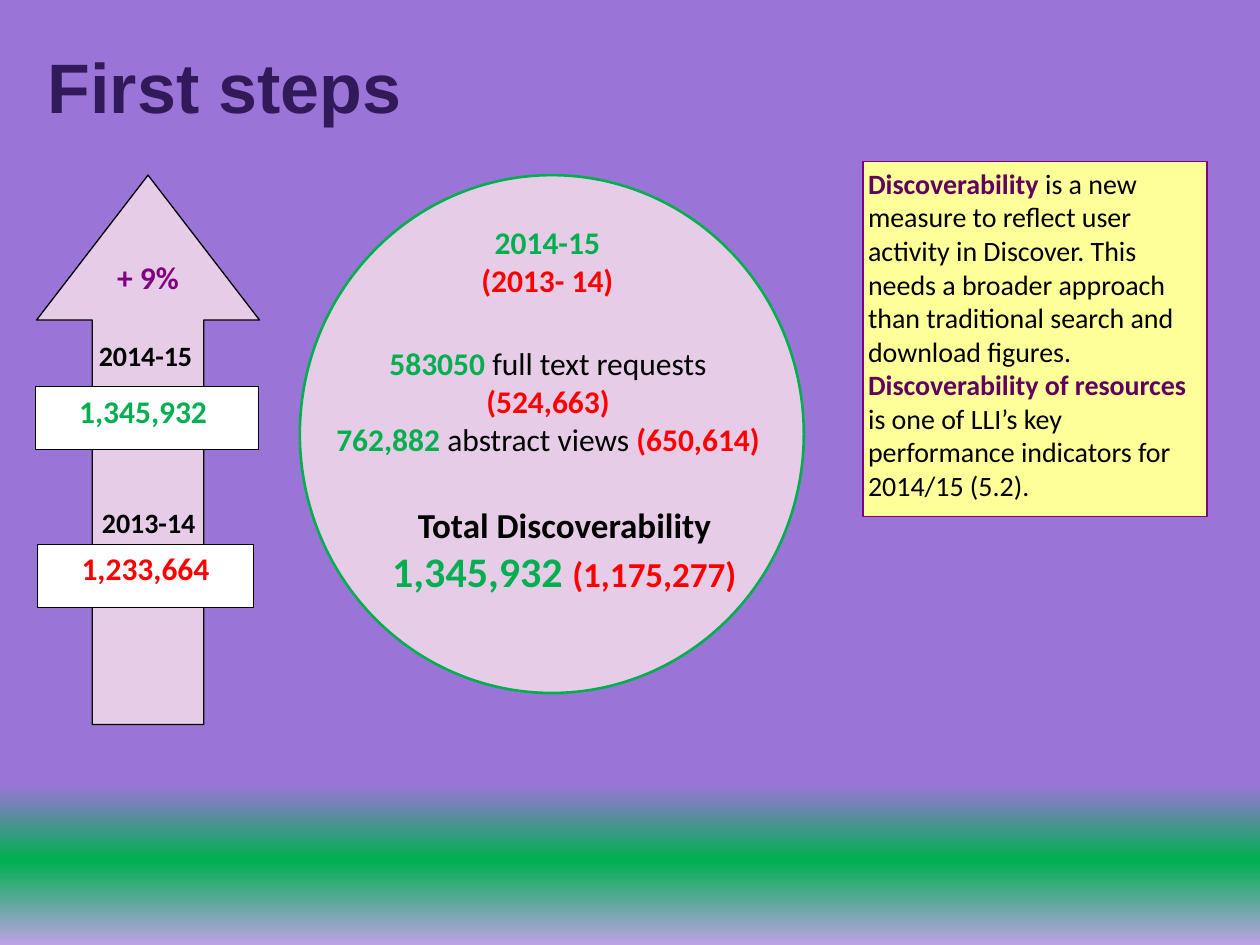
from copy import deepcopy

from pptx import Presentation, util as u
from pptx.dml.color import RGBColor
from pptx.enum import shapes, text

CELL = 0.1  # inches: the slide is a grid of 100 columns by 75 rows
COLUMNS, ROWS = 100, 75

GREEN = RGBColor(0x00, 0xB0, 0x50)
RED = RGBColor(0xFF, 0x00, 0x00)
BLACK = RGBColor(0x00, 0x00, 0x00)
WHITE = RGBColor(0xFF, 0xFF, 0xFF)
PURPLE = RGBColor(0x80, 0x00, 0x80)
PLUM = RGBColor(0x60, 0x00, 0x60)
INDIGO = RGBColor(0x32, 0x19, 0x59)
PINK = RGBColor(0xE6, 0xCC, 0xE6)
YELLOW = RGBColor(0xFF, 0xFF, 0x99)
VIOLET = RGBColor(0x9B, 0x74, 0xD8)
LILAC = RGBColor(0xBC, 0xA2, 0xE5)

CENTER, LEFT = text.PP_ALIGN.CENTER, text.PP_ALIGN.LEFT
FORM = shapes.MSO_SHAPE
LINE_BREAK = None


def grid(*cells):
    return [u.Inches(cell * CELL) for cell in cells]


def paint_background(page, stops):
    """Fill the page with a top-to-bottom gradient of (percent, colour) stops."""
    fill = page.background.fill
    fill.gradient()
    fill.gradient_angle = 270
    stop_list = page._element.find(".//{*}gsLst")
    for _ in stops[2:]:
        stop_list.append(deepcopy(stop_list[0]))
    for stop, (percent, colour) in zip(fill.gradient_stops, stops):
        stop.color.rgb = colour
        stop.position = percent / 100


def add_form(page, form, cells, fill, line, width=0.75):
    shape = page.shapes.add_shape(form, *grid(*cells))
    shape.shadow.inherit = False
    shape.fill.solid()
    shape.fill.fore_color.rgb = fill
    shape.line.color.rgb = line
    shape.line.width = u.Pt(width)
    return shape


def add_span(para, words, colour, bold, size=None):
    span = para.add_run()
    span.text = words
    span.font.color.rgb = colour
    span.font.bold = bold
    if size:
        span.font.size = u.Pt(size)


def write(shape, paragraphs, size, align=CENTER, font="Calibri", inset=0.4, wrap=True):
    """Write paragraphs, each a list of (text, colour, bold[, size]) or LINE_BREAK."""
    frame = shape.text_frame
    frame.word_wrap = wrap
    frame.vertical_anchor = text.MSO_ANCHOR.TOP
    (frame.margin_left, frame.margin_top,
     frame.margin_right, frame.margin_bottom) = grid(*[inset] * 4)
    for index, spans in enumerate(paragraphs):
        para = frame.add_paragraph() if index else frame.paragraphs[0]
        para.alignment = align
        para.font.name = font
        para.font.size = u.Pt(size)
        for span in spans:
            if span is LINE_BREAK:
                para.add_line_break()
            else:
                add_span(para, *span)


def add_text(page, cells, paragraphs, size, **style):
    write(page.shapes.add_textbox(*grid(*cells)), paragraphs, size, **style)


def add_growth_arrow(page):
    arrow = add_form(page, FORM.UP_ARROW, (2.9, 13.9, 17.7, 43.6), PINK, BLACK)
    arrow.adjustments[0], arrow.adjustments[1] = 0.5, 0.65
    totals = [
        ((2.8, 30.7, 17.7, 5), "1,345,932 ", GREEN),
        ((3, 43.2, 17.1, 5), "1,233,664", RED),
    ]
    for cells, total, colour in totals:
        box = add_form(page, FORM.RECTANGLE, cells, WHITE, BLACK)
        write(box, [[(total, colour, True)]], 18)
    labels = [
        ((7.4, 26.5, 8.3, 3.3), "2014-15", BLACK, 16),
        ((7.4, 39.7, 8.8, 3.3), "2013-14", BLACK, 16),
        ((7.5, 20.1, 8.5, 4.2), "+ 9%", PURPLE, 18),
    ]
    for cells, label, colour, size in labels:
        add_text(page, cells, [[(label, colour, True)]], size, wrap=False)


def add_circle_figures(page):
    add_text(page, (36.8, 17.3, 13.3, 8.2), [
        [("2014-15", GREEN, True)],
        [("(2013- 14)", RED, True)],
    ], 18)
    add_text(page, (25.6, 26.9, 35.8, 12.7), [[
        ("583050 ", GREEN, True),
        ("full text requests ", BLACK, False),
        ("(524,663)", RED, True),
        LINE_BREAK,
        ("762,882 ", GREEN, True),
        ("abstract views ", BLACK, False),
        ("(650,614)", RED, True),
    ]], 18)
    add_text(page, (27.3, 39.6, 35, 9.6), [
        [("Total Discoverability", BLACK, True)],
        [("1,345,932 ", GREEN, True, 24), ("(1,175,277)", RED, True)],
    ], 20)


def add_definition(page):
    note = add_form(page, FORM.RECTANGLE, (68.5, 12.8, 27.3, 28.2), YELLOW, PURPLE)
    write(note, [
        [("Discoverability ", PLUM, True),
         ("is a new measure to reflect user activity in Discover. This needs a "
          "broader approach than traditional search and download figures.",
          BLACK, False)],
        [("Discoverability of resources ", PLUM, True),
         ("is one of LLI’s key performance indicators for 2014/15 (5.2).",
          BLACK, False)],
    ], 16, align=LEFT)


def main():
    deck = Presentation()
    deck.slide_width, deck.slide_height = grid(COLUMNS, ROWS)
    page = deck.slides.add_slide(deck.slide_layouts[6])
    paint_background(page, [(13, VIOLET), (83, VIOLET), (91, GREEN), (100, LILAC)])
    add_form(page, FORM.OVAL, (23.8, 13.9, 40, 41.1), PINK, GREEN, 1.5)
    add_text(page, (3.3, 3, 30.4, 6.8), [[("First steps", INDIGO, True)]], 40,
             align=LEFT, font="Arial", inset=0.5, wrap=False)
    add_growth_arrow(page)
    add_circle_figures(page)
    add_definition(page)
    deck.save("out.pptx")


if __name__ == "__main__":
    main()
